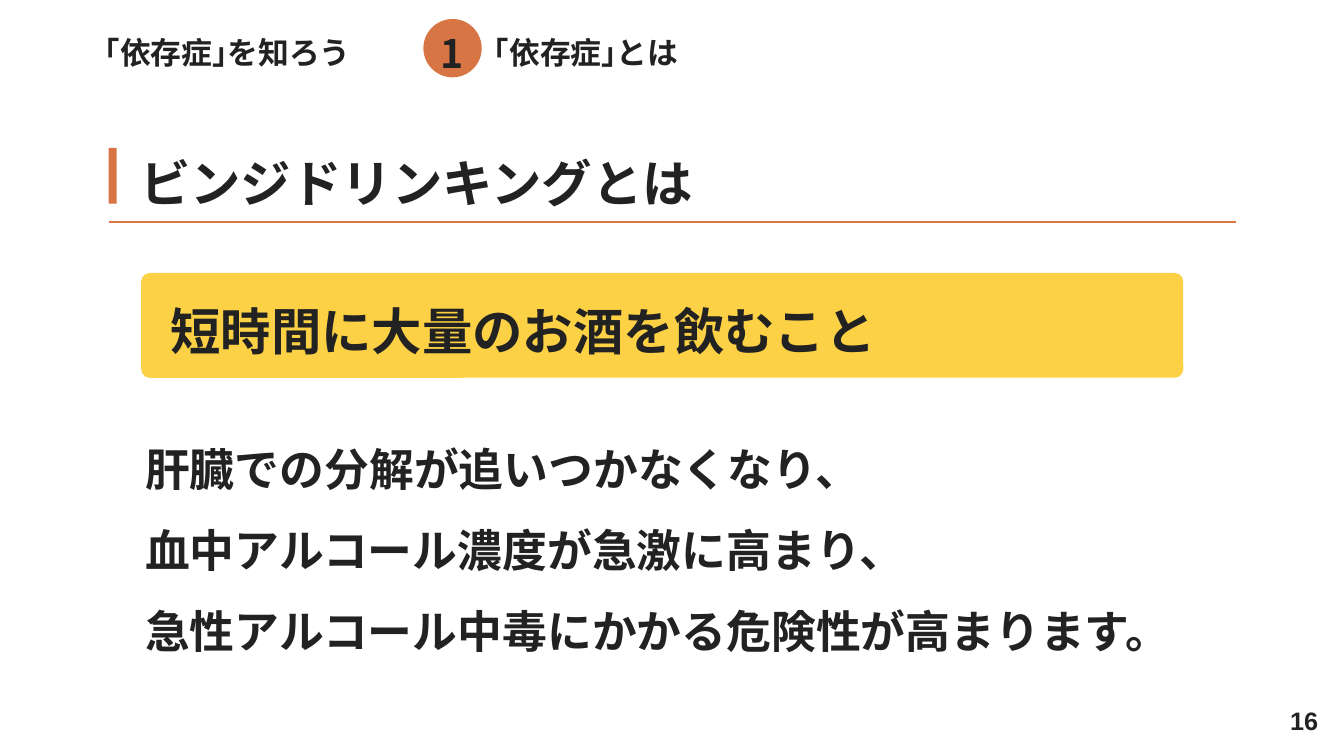
from lxml.etree import SubElement
from pptx import Presentation
from pptx.dml.color import RGBColor
from pptx.enum.shapes import MSO_CONNECTOR, MSO_SHAPE
from pptx.enum.text import MSO_ANCHOR, PP_ALIGN
from pptx.oxml.ns import qn
from pptx.util import Cm, Pt

INK = RGBColor(0x22, 0x22, 0x22)
ORANGE = RGBColor(0xD8, 0x75, 0x44)
YELLOW = RGBColor(0xFC, 0xD1, 0x45)
JP_FONT = "Noto Sans CJK JP"


def write(tf, text, size=22, font=JP_FONT, align=PP_ALIGN.LEFT, spacing=None,
          anchor=MSO_ANCHOR.TOP, left=0, top=0):
    """Fill a text frame with one bold paragraph per line of text."""
    tf.word_wrap = True
    tf.vertical_anchor = anchor
    tf.margin_left, tf.margin_top = Cm(left), Cm(top)
    tf.margin_right = tf.margin_bottom = 0
    for i, line in enumerate(text.split("\n")):
        p = tf.add_paragraph() if i else tf.paragraphs[0]
        p.alignment = align
        p.line_spacing = spacing
        r = p.add_run()
        r.text = line
        r.font.size = Pt(size)
        r.font.bold = True
        r.font.color.rgb = INK
        r.font.name = font
        SubElement(r.font._element, qn("a:ea")).set("typeface", font)


def add_text(s, text, x, y, w, h, **fmt):
    """Add a text box without insets."""
    write(s.shapes.add_textbox(Cm(x), Cm(y), Cm(w), Cm(h)).text_frame, text, **fmt)


def add_block(s, kind, color, x, y, w, h):
    """Add a filled shape without outline or shadow."""
    sp = s.shapes.add_shape(kind, Cm(x), Cm(y), Cm(w), Cm(h))
    sp.fill.solid()
    sp.fill.fore_color.rgb = color
    sp.line.fill.background()
    sp.shadow.inherit = False
    return sp


def add_rule(s, x1, x2, y):
    """Add a thin horizontal line."""
    c = s.shapes.add_connector(MSO_CONNECTOR.STRAIGHT, Cm(x1), Cm(y), Cm(x2), Cm(y))
    c.line.color.rgb = ORANGE
    c.line.width = Pt(1.5)
    SubElement(c._element.spPr, qn("a:effectLst"))


def main():
    """Build the slide about binge drinking."""
    prs = Presentation()
    prs.slide_width, prs.slide_height = Cm(33.87), Cm(19.05)
    s = prs.slides.add_slide(prs.slide_layouts[6])

    add_text(s, "｢依存症｣を知ろう", 2.64, 0.84, 7.29, 0.94)
    add_block(s, MSO_SHAPE.OVAL, ORANGE, 10.67, 0.48, 1.47, 1.47)
    add_text(s, "1", 10.67, 0.74, 1.47, 1.19, size=28, align=PP_ALIGN.CENTER)
    add_text(s, "｢依存症｣とは", 12.45, 0.84, 18.9, 0.94)

    add_block(s, MSO_SHAPE.RECTANGLE, ORANGE, 2.74, 3.73, 0.2, 1.4)
    add_text(s, "ビンジドリンキングとは", 3.53, 3.76, 27.61, 1.6, size=36, spacing=Pt(45))
    add_rule(s, 2.74, 31.14, 5.59)

    banner = add_block(s, MSO_SHAPE.ROUNDED_RECTANGLE, YELLOW, 3.56, 6.88, 26.26, 2.64)
    banner.adjustments[0] = 0.08
    write(banner.text_frame, "短時間に大量のお酒を飲むこと", size=36, spacing=Pt(38),
          left=0.67, top=0.8)

    add_text(s, "肝臓での分解が追いつかなくなり、\n"
                "血中アルコール濃度が急激に高まり、\n"
                "急性アルコール中毒にかかる危険性が高まります。",
             3.66, 10.46, 26.26, 5.99, size=32, spacing=1.5)
    add_text(s, "16", 32.13, 17.65, 1.09, 1.02, size=18, font="Arial",
             align=PP_ALIGN.RIGHT, anchor=MSO_ANCHOR.MIDDLE)
    prs.save("out.pptx")


if __name__ == "__main__":
    main()
